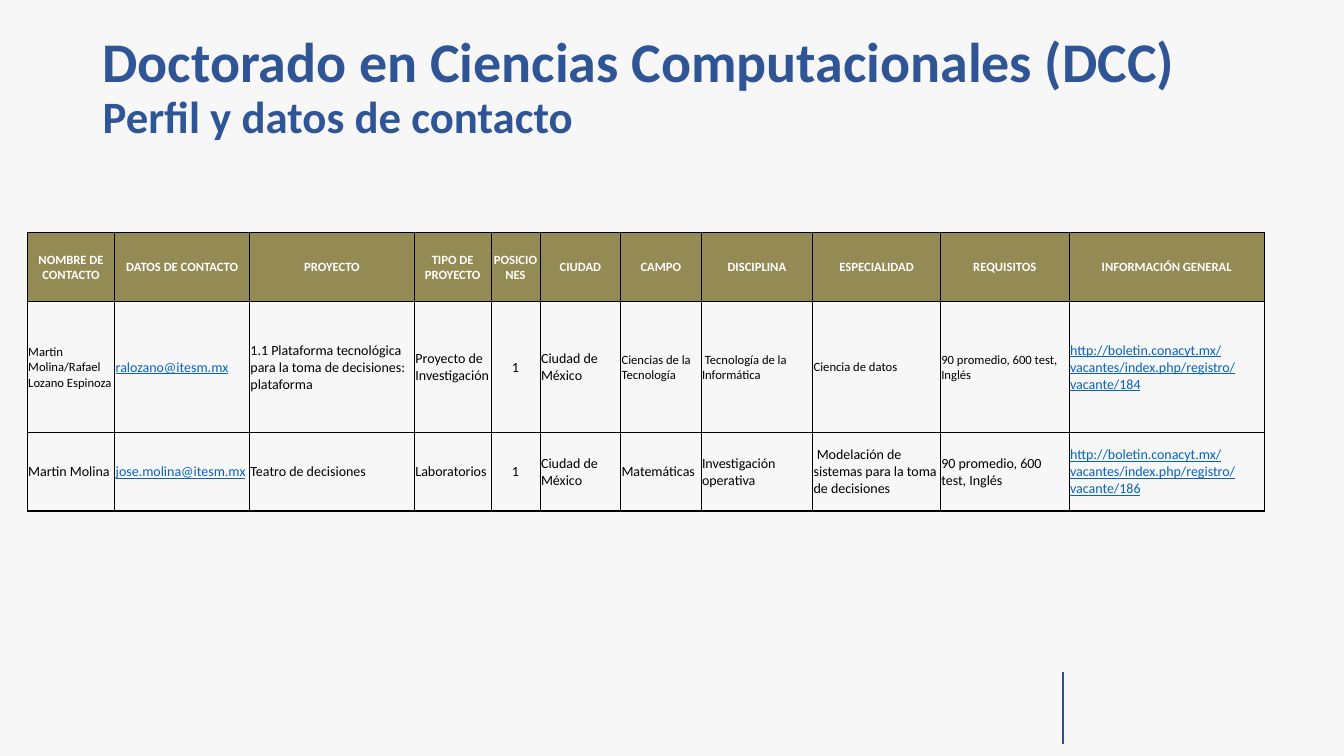
import pptx
import pptx.dml.color
import pptx.enum.shapes
import pptx.enum.text
import pptx.oxml
import pptx.oxml.ns
import pptx.util
from lxml import etree

RGB = pptx.dml.color.RGBColor
BACKGROUND = RGB(0xF7, 0xF7, 0xF7)
TITLE_BLUE = RGB(0x2F, 0x55, 0x97)
RULE_BLUE = RGB(0x2D, 0x4B, 0xA0)
LINK_BLUE = RGB(0x05, 0x63, 0xC1)
HEADER_OLIVE = RGB(0x94, 0x8A, 0x54)
WHITE = RGB(0xFF, 0xFF, 0xFF)
BLACK = RGB(0, 0, 0)
FONT = "Calibri"

COLUMN_SHARES = [0.87, 1.34, 1.64, 0.76, 0.49, 0.8, 0.8, 1.11, 1.27, 1.28, 1.94]
ROW_SHARES = [0.68, 1.3, 0.78]
POSITIONS_COLUMN = 4
SMALL_CELLS = {(1, c) for c in (0, 6, 7, 8, 9)}
VACANCY_URL = "http://boletin.conacyt.mx/vacantes/index.php/registro/vacante/"
ROWS = [
    ["NOMBRE DE CONTACTO", "DATOS DE CONTACTO", "PROYECTO", "TIPO DE PROYECTO",
     "POSICIONES", "CIUDAD", "CAMPO", "DISCIPLINA", "ESPECIALIDAD",
     "REQUISITOS", "INFORMACIÓN GENERAL"],
    ["Martin Molina/Rafael Lozano Espinoza", "ralozano@itesm.mx",
     "1.1 Plataforma tecnológica para la toma de decisiones: plataforma",
     "Proyecto de Investigación", "1", "Ciudad de México",
     "Ciencias de la Tecnología", " Tecnología de la Informática",
     "Ciencia de datos", "90 promedio, 600 test, Inglés", VACANCY_URL + "184"],
    ["Martin Molina", "jose.molina@itesm.mx", "Teatro de decisiones",
     "Laboratorios", "1", "Ciudad de México", "Matemáticas",
     "Investigación operativa",
     " Modelación de sistemas para la toma de decisiones",
     "90 promedio, 600 test, Inglés", VACANCY_URL + "186"],
]


def inches(*lengths):
    return [pptx.util.Inches(n) for n in lengths]


def set_font(r, size, color, bold=False, underline=False):
    r.font.name = FONT
    r.font.size = pptx.util.Pt(size)
    r.font.color.rgb = color
    r.font.bold = bold
    r.font.underline = underline


def set_borders(cell, widths):
    tc_pr = cell._tc.get_or_add_tcPr()
    for i, (side, width) in enumerate(zip("LRTB", widths)):
        tc_pr.insert(i, pptx.oxml.parse_xml(
            f'<a:ln{side} {pptx.oxml.ns.nsdecls("a")} w="{pptx.util.Pt(width)}">'
            f'<a:solidFill><a:srgbClr val="{BLACK}"/></a:solidFill></a:ln{side}>'))


def add_title(s, left, top, width, height):
    tf = s.shapes.add_textbox(*inches(left, top, width, height)).text_frame
    tf.word_wrap = True
    tf.vertical_anchor = pptx.enum.text.MSO_ANCHOR.TOP
    tf.margin_top = pptx.util.Inches(0.11)
    p = tf.paragraphs[0]
    p.text = "Doctorado en Ciencias Computacionales (DCC)\vPerfil y datos de contacto"
    p.line_spacing = 0.9
    for r, size in zip(p.runs, (40, 32)):
        set_font(r, size, TITLE_BLUE, bold=True)


def fill_cell(cell, row, col, text):
    header = row == 0
    link = "@" in text or text.startswith("http")
    cell.margin_left = cell.margin_right = cell.margin_top = pptx.util.Inches(0.01)
    cell.margin_bottom = 0
    cell.vertical_anchor = pptx.enum.text.MSO_ANCHOR.MIDDLE
    p = cell.text_frame.paragraphs[0]
    p.text = text
    if header or col == POSITIONS_COLUMN:
        p.alignment = pptx.enum.text.PP_ALIGN.CENTER
    size = 9 if header or (row, col) in SMALL_CELLS else 10
    color = WHITE if header else LINK_BLUE if link else BLACK
    set_font(p.runs[0], size, color, bold=header, underline=link)
    if header:
        cell.fill.solid()
        cell.fill.fore_color.rgb = HEADER_OLIVE
    else:
        cell.fill.background()
    # Heavier lines around the header, below the table and at its right
    right = 1 if not header and col == len(COLUMN_SHARES) - 1 else 0.5
    set_borders(cell, (0.5, right, 0.5 if row == 2 else 1, 0.5 if row == 1 else 1))


def add_contact_table(s, left, top, width, height):
    frame = s.shapes.add_table(len(ROW_SHARES), len(COLUMN_SHARES),
                               *inches(left, top, width, height))
    table = frame.table
    table.horz_banding = False
    for column, share in zip(table.columns, COLUMN_SHARES):
        column.width = pptx.util.Inches(width * share / sum(COLUMN_SHARES))
    for row, share in zip(table.rows, ROW_SHARES):
        row.height = pptx.util.Inches(height * share / sum(ROW_SHARES))
    for row, texts in enumerate(ROWS):
        for col, text in enumerate(texts):
            fill_cell(table.cell(row, col), row, col, text)


def add_footer_rule(s, x, top, height):
    line = s.shapes.add_connector(pptx.enum.shapes.MSO_CONNECTOR.STRAIGHT,
                                  *inches(x, top, x, top + height))
    line.line.color.rgb = RULE_BLUE
    line.line.width = pptx.util.Pt(1.5)
    etree.SubElement(line._element.spPr, pptx.oxml.ns.qn("a:effectLst"))


def main():
    prs = pptx.Presentation()
    prs.slide_width, prs.slide_height = inches(13.33, 7.5)
    s = prs.slides.add_slide(prs.slide_layouts[6])
    s.background.fill.solid()
    s.background.fill.fore_color.rgb = BACKGROUND
    add_footer_rule(s, 10.54, 6.67, 0.71)
    add_title(s, 0.92, 0.23, 11.5, 0.7)
    add_contact_table(s, 0.27, 2.31, 12.27, 2.76)
    prs.save("out.pptx")


if __name__ == "__main__":
    main()
